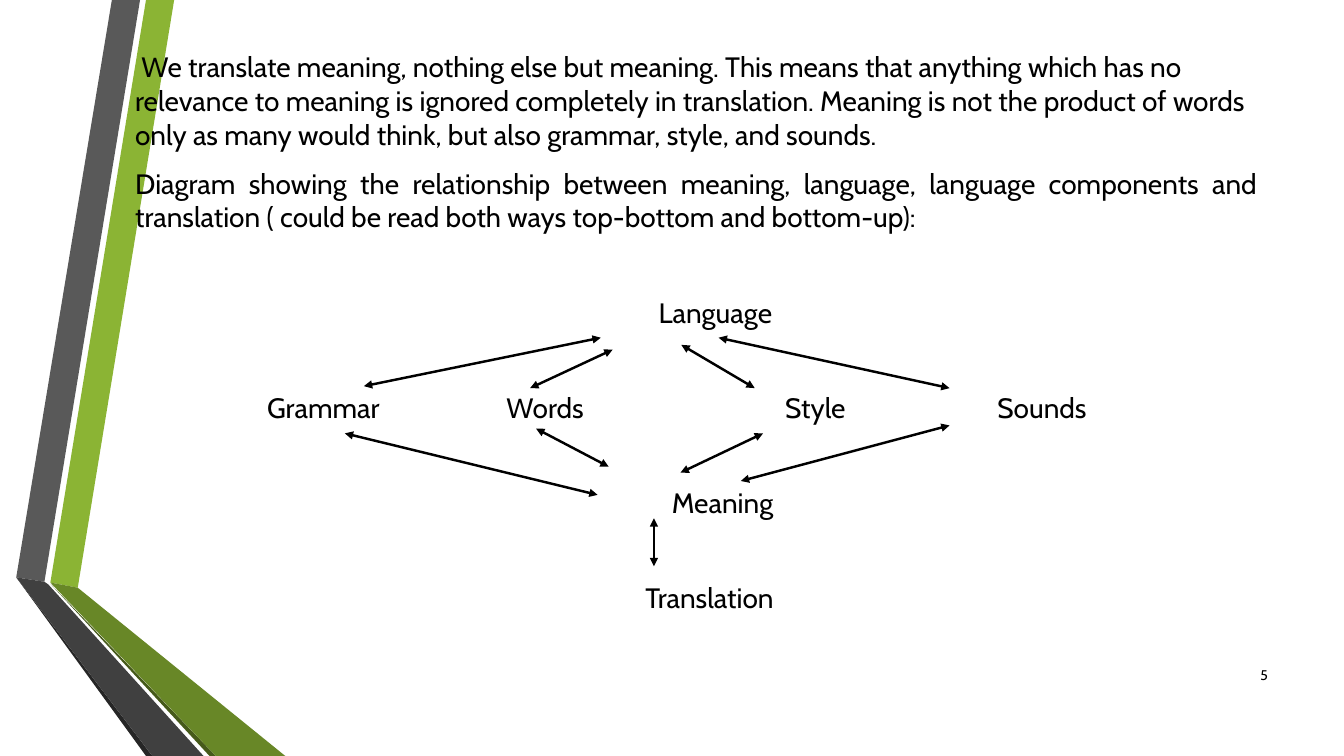
from lxml.etree import SubElement
from pptx import Presentation
from pptx.dml.color import RGBColor
from pptx.enum.shapes import MSO_CONNECTOR
from pptx.enum.text import MSO_ANCHOR, MSO_AUTO_SIZE, PP_ALIGN
from pptx.oxml.ns import qn
from pptx.util import Cm, Pt

FONT = "Cabin"
COLOURS = {
    "text": "000000", "green": "8BB434", "grey": "595959", "black edge": "262626",
    "olive edge": "465A1A", "olive": "688727", "charcoal": "404040",
}

# Folded ribbon on the left: colour and corners in cm
RIBBON = [
    ("green", [(1.27, 14.68), (1.96, 14.81), (4.39, 0), (3.68, 0)]),
    ("grey", [(3.53, 0), (2.82, 0), (0.41, 14.55), (1.12, 14.66)]),
    ("black edge", [(0.41, 14.55), (3.68, 19.05), (3.84, 19.05)]),
    ("olive edge", [(1.27, 14.71), (5.28, 19.05), (5.44, 19.05)]),
    ("olive", [(1.27, 14.68), (5.44, 19.05), (7.19, 19.05), (1.96, 14.81)]),
    ("charcoal", [(5.13, 19.05), (1.22, 14.73), (1.12, 14.66), (0.41, 14.55), (3.84, 19.05)]),
]

# Text, alignment and first-line indent in cm
INTRODUCTION = [
    ("We translate meaning, nothing else but meaning. This means that anything which has no "
     "relevance to meaning is ignored completely in translation. Meaning is not the product of "
     "words only as many would think, but also grammar, style, and sounds.", PP_ALIGN.LEFT, 0.16),
    ("Diagram showing the relationship between meaning, language, language components and "
     "translation ( could be read both ways top-bottom and bottom-up):", PP_ALIGN.JUSTIFY, 0),
]

# Diagram rows from top to bottom: labels with their centres in cm
ROWS = [
    [("Language", 18.03)],
    [("Grammar", 8.15), ("Words", 13.74), ("Style", 20.55), ("Sounds", 26.26)],
    [("Meaning", 18.21)],
    [("Translation", 17.88)],
]
FIRST_ROW, ROW_PITCH = 7.87, 2.39
LABEL_WIDTH, LABEL_HEIGHT = 3.6, 0.9

# Arrow ends in cm
ARROWS = [
    ((15.14, 8.51), (9.17, 9.73)),     # Language - Grammar
    ((15.44, 8.81), (13.36, 9.78)),    # Language - Words
    ((17.17, 8.69), (19.02, 9.78)),    # Language - Style
    ((18.11, 8.51), (23.93, 9.78)),    # Language - Sounds
    ((15.06, 12.47), (8.69, 10.92)),   # Meaning - Grammar
    ((13.51, 10.8), (15.34, 11.76)),   # Words - Meaning
    ((19.23, 10.92), (17.15, 11.91)),  # Style - Meaning
    ((23.93, 10.72), (18.67, 12.12)),  # Sounds - Meaning
    ((16.48, 13.06), (16.48, 14.27)),  # Meaning - Translation
]


def colour(name):
    return RGBColor.from_string(COLOURS[name])


def format_paragraph(para, size, alignment):
    para.alignment = alignment
    para.font.name = FONT
    para.font.size = Pt(size)
    para.font.color.rgb = colour("text")


def add_facet(slide, fill, corners):
    points = [(Cm(x), Cm(y)) for x, y in corners]
    builder = slide.shapes.build_freeform(*points[0])
    builder.add_line_segments(points[1:], close=True)
    facet = builder.convert_to_shape()
    facet.shadow.inherit = False
    facet.fill.solid()
    facet.fill.fore_color.rgb = colour(fill)
    facet.line.fill.background()


def fill_body(slide, body):
    slide.shapes.element.append(body.element)  # bring in front of the ribbon
    body.left, body.top, body.width, body.height = Cm(3.15), Cm(1.13), Cm(28.8), Cm(5.2)
    frame = body.text_frame
    frame.auto_size = MSO_AUTO_SIZE.NONE
    frame.vertical_anchor = MSO_ANCHOR.TOP
    for index, (text, alignment, indent) in enumerate(INTRODUCTION):
        para = frame.paragraphs[0] if index == 0 else frame.add_paragraph()
        para.text = text
        para.space_before = Pt(5 if index else 0)
        para.space_after = Pt(6)
        properties = para._p.get_or_add_pPr()
        properties.set("marL", "0")
        properties.set("indent", str(Cm(indent)))
        SubElement(properties, qn("a:buNone"))
        format_paragraph(para, 20, alignment)


def add_label(slide, text, left, top, width, height, size=20, alignment=PP_ALIGN.CENTER):
    box = slide.shapes.add_textbox(Cm(left), Cm(top), Cm(width), Cm(height))
    frame = box.text_frame
    frame.word_wrap = True
    frame.vertical_anchor = MSO_ANCHOR.MIDDLE
    frame.margin_left = frame.margin_right = frame.margin_top = frame.margin_bottom = 0
    frame.text = text
    format_paragraph(frame.paragraphs[0], size, alignment)


def add_arrow(slide, start, end):
    arrow = slide.shapes.add_connector(
        MSO_CONNECTOR.STRAIGHT, *(Cm(value) for value in start + end))
    arrow.line.color.rgb = colour("text")
    arrow.line.width = Pt(1.75)
    line = arrow.line._get_or_add_ln()
    for tag in ("a:headEnd", "a:tailEnd"):
        SubElement(line, qn(tag), type="triangle")
    SubElement(arrow.element.spPr, qn("a:effectLst"))


def main():
    deck = Presentation()
    deck.slide_width, deck.slide_height = Cm(33.87), Cm(19.05)
    slide = deck.slides.add_slide(deck.slide_layouts[1])
    title = slide.shapes.title.element
    title.getparent().remove(title)

    # Ribbon and introduction
    for fill, corners in RIBBON:
        add_facet(slide, fill, corners)
    fill_body(slide, slide.placeholders[1])

    # Diagram
    for row, labels in enumerate(ROWS):
        top = FIRST_ROW + row * ROW_PITCH - LABEL_HEIGHT / 2
        for text, centre in labels:
            add_label(slide, text, centre - LABEL_WIDTH / 2, top, LABEL_WIDTH, LABEL_HEIGHT)
    for start, end in ARROWS:
        add_arrow(slide, start, end)

    # Slide number
    add_label(slide, "5", 30.43, 16.5, 1.52, 1.02, size=10, alignment=PP_ALIGN.RIGHT)

    deck.save("out.pptx")


if __name__ == "__main__":
    main()
